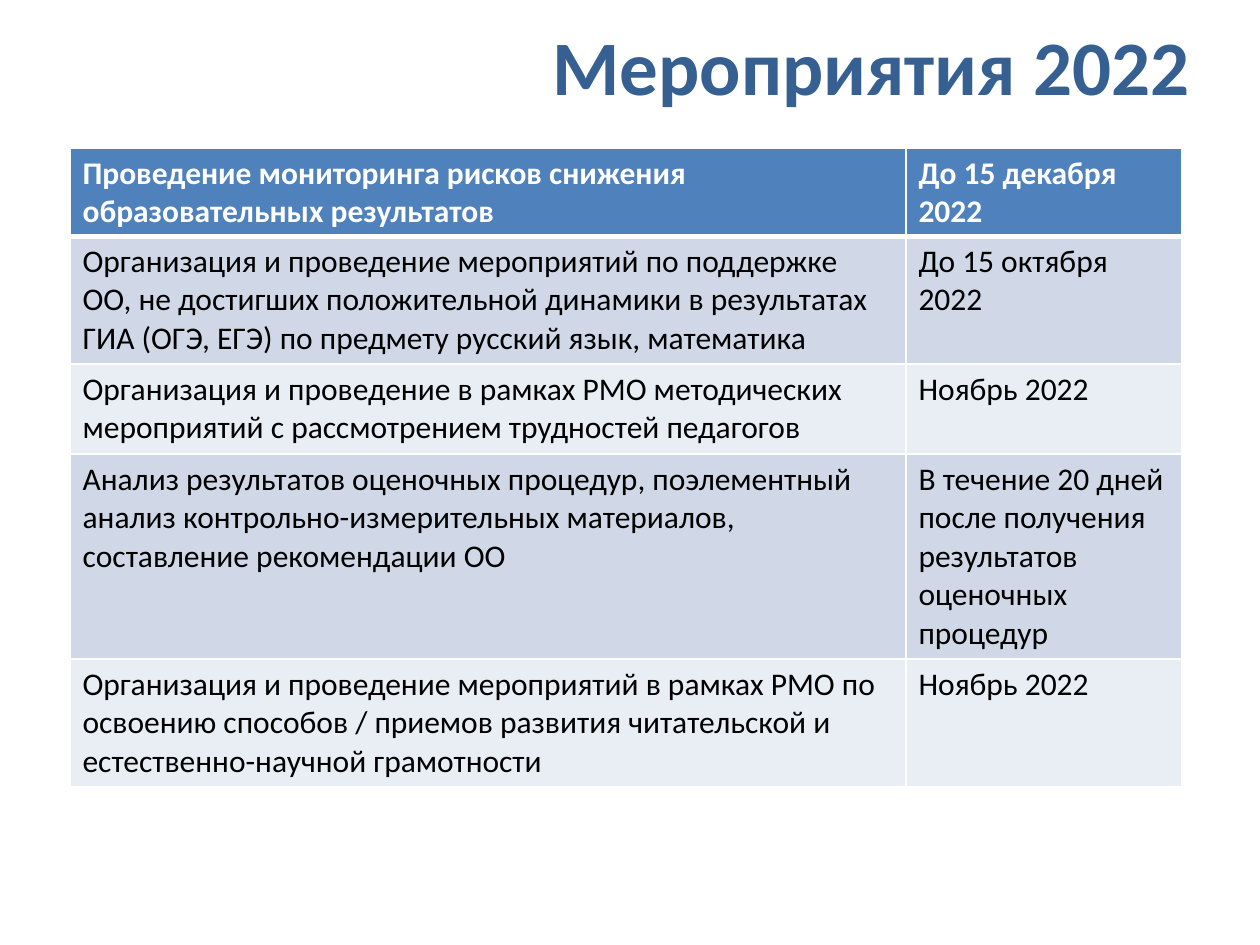
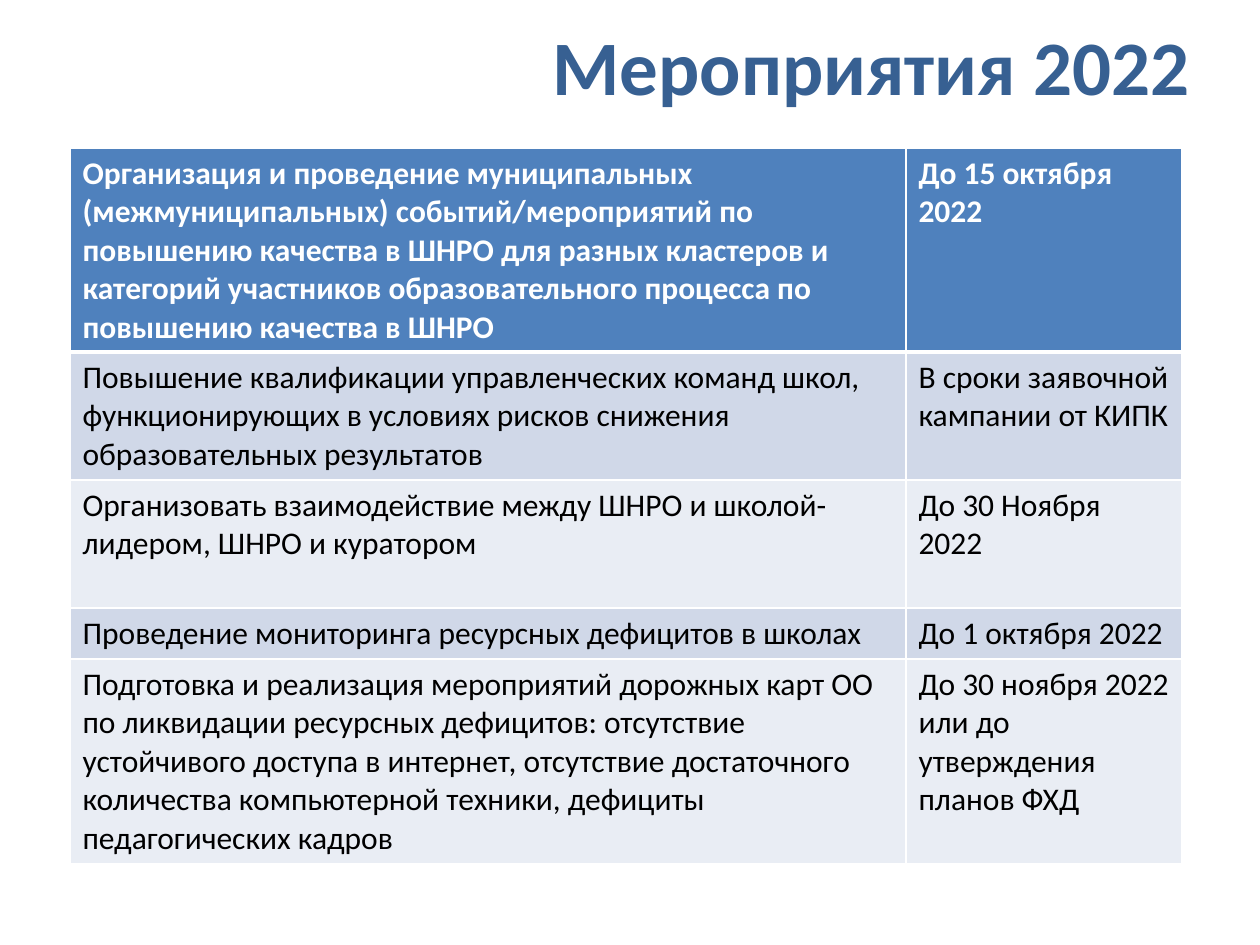
from lxml.etree import SubElement
from pptx import Presentation
from pptx.dml.color import RGBColor
from pptx.enum.text import MSO_ANCHOR, PP_ALIGN
from pptx.oxml.ns import qn
from pptx.util import Emu, Pt

PX = 914400 // 126
FONT = "Calibri"
WHITE = RGBColor(0xFF, 0xFF, 0xFF)
BLACK = RGBColor(0x00, 0x00, 0x00)
TITLE_BLUE = RGBColor(0x37, 0x60, 0x92)
HEADER_BLUE = RGBColor(0x4F, 0x81, 0xBD)
BANDS = [RGBColor(0xE9, 0xED, 0xF4), RGBColor(0xD0, 0xD8, 0xE8)]

TITLE = "Мероприятия 2022"
TITLE_BOX = (483, 0, 777, 130)
TABLE_BOX = (70, 148, 1112)
DATE_WIDTH = 276

# Each row: height, activity, deadline
MONITORING_PLAN = [
    (88, "Проведение мониторинга рисков снижения образовательных результатов",
     "До 15 декабря 2022"),
    (128, "Организация и проведение мероприятий по поддержке ОО, не достигших "
     "положительной динамики в результатах ГИА (ОГЭ, ЕГЭ) по предмету русский "
     "язык, математика", "До 15 октября 2022"),
    (90, "Организация и проведение в рамках РМО методических мероприятий "
     "с рассмотрением трудностей педагогов", "Ноябрь 2022"),
    (205, "Анализ результатов оценочных процедур, поэлементный анализ "
     "контрольно-измерительных материалов, составление рекомендации ОО",
     "В течение 20 дней после получения результатов оценочных процедур"),
    (128, "Организация и проведение мероприятий в рамках РМО по освоению "
     "способов / приемов развития читательской и естественно-научной "
     "грамотности", "Ноябрь 2022"),
]
SUPPORT_PLAN = [
    (204, "Организация и проведение муниципальных (межмуниципальных) "
     "событий/мероприятий по повышению качества в ШНРО для разных кластеров "
     "и категорий участников образовательного процесса по повышению качества "
     "в ШНРО", "До 15 октября 2022"),
    (128, "Повышение квалификации управленческих команд школ, функционирующих "
     "в условиях рисков снижения образовательных результатов",
     "В сроки заявочной кампании от КИПК"),
    (128, "Организовать взаимодействие между ШНРО и школой-лидером, ШНРО "
     "и куратором", "До 30 Ноября 2022"),
    (51, "Проведение мониторинга ресурсных дефицитов в школах",
     "До 1 октября 2022"),
    (205, "Подготовка и реализация мероприятий дорожных карт ОО по ликвидации "
     "ресурсных дефицитов: отсутствие устойчивого доступа в интернет, "
     "отсутствие достаточного количества компьютерной техники, дефициты "
     "педагогических кадров",
     "До 30 ноября 2022 или до утверждения планов ФХД"),
]


def px(n):
    return Emu(n * PX)


def format_run(p, size, color, bold):
    font = p.runs[0].font
    font.name, font.size, font.bold = FONT, Pt(size), bold
    font.color.rgb = color


def set_borders(cell, top, bottom):
    tc_pr = cell._tc.get_or_add_tcPr()
    for side, width in (("L", 1), ("R", 1), ("T", top), ("B", bottom)):
        line = SubElement(tc_pr, qn(f"a:ln{side}"), w=str(Pt(width)))
        fill = SubElement(line, qn("a:solidFill"))
        SubElement(fill, qn("a:srgbClr"), val=str(WHITE))


def add_title(slide, box):
    tf = slide.shapes.add_textbox(*map(px, box)).text_frame
    tf.word_wrap = True
    tf.vertical_anchor = MSO_ANCHOR.MIDDLE
    tf.text = TITLE
    p = tf.paragraphs[0]
    p.alignment = PP_ALIGN.CENTER
    format_run(p, 44, TITLE_BLUE, True)


def add_plan_table(slide, box, plan):
    left, top, width = box
    height = sum(row[0] for row in plan)
    frame = slide.shapes.add_table(
        len(plan), 2, px(left), px(top), px(width), px(height))
    table = frame.table
    table.columns[0].width = px(width - DATE_WIDTH)
    table.columns[1].width = px(DATE_WIDTH)

    for i, (row_height, *texts) in enumerate(plan):
        table.rows[i].height = px(row_height)
        header = i == 0
        for cell, text in zip(table.rows[i].cells, texts):
            # The heavy rule runs between the header and the first row
            set_borders(cell, 3 if i == 1 else 1, 3 if header else 1)
            cell.fill.solid()
            cell.fill.fore_color.rgb = HEADER_BLUE if header else BANDS[i % 2]
            cell.text_frame.text = text
            format_run(cell.text_frame.paragraphs[0], 18,
                       WHITE if header else BLACK, header)


def add_plan_slide(prs, plan):
    slide = prs.slides.add_slide(prs.slide_layouts[6])
    add_title(slide, TITLE_BOX)
    add_plan_table(slide, TABLE_BOX, plan)


def main():
    prs = Presentation()
    prs.slide_width, prs.slide_height = px(1260), px(945)
    for plan in (MONITORING_PLAN, SUPPORT_PLAN):
        add_plan_slide(prs, plan)
    prs.save("out.pptx")


if __name__ == "__main__":
    main()
